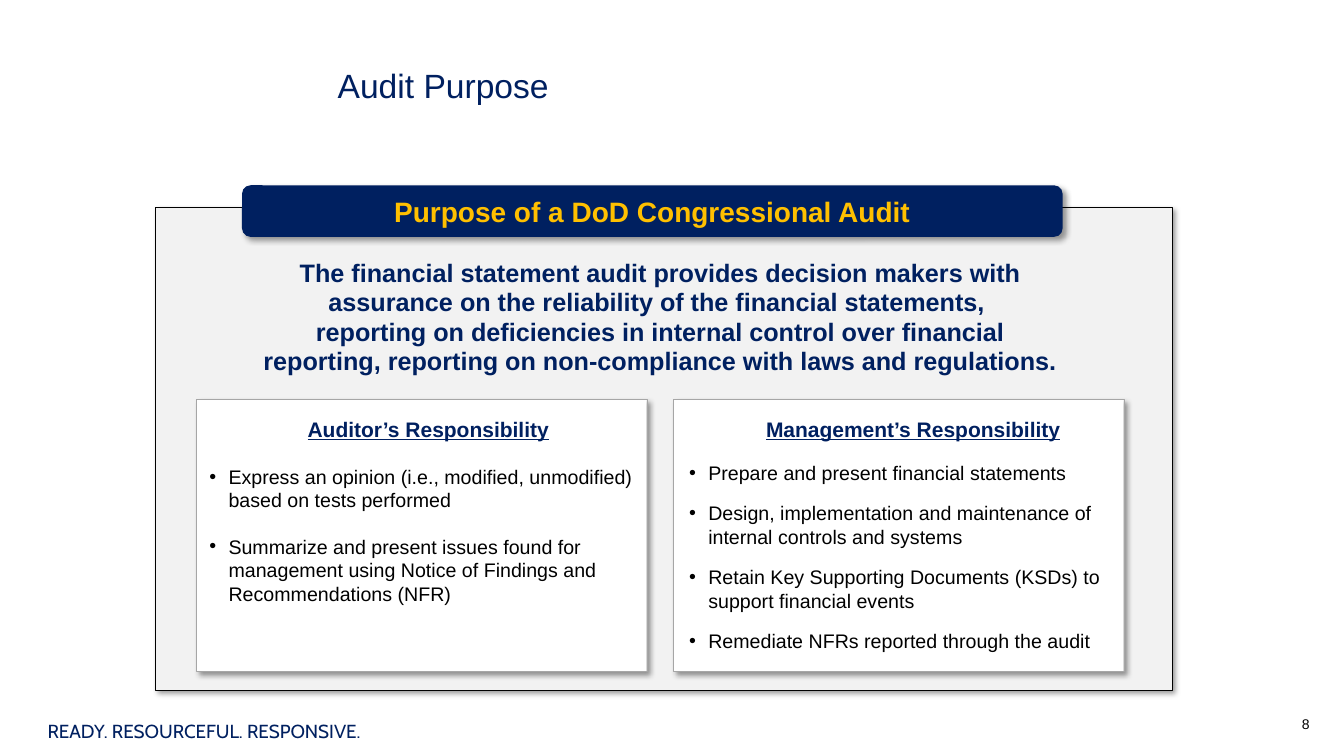
from lxml import etree
from pptx import Presentation
from pptx.dml.color import RGBColor
from pptx.enum.shapes import MSO_SHAPE
from pptx.enum.text import MSO_ANCHOR, PP_ALIGN
from pptx.oxml import parse_xml
from pptx.oxml.ns import qn
from pptx.util import Cm, Pt

NAVY = RGBColor(0x00, 0x20, 0x60)
GOLD = RGBColor(0xFF, 0xC0, 0x00)
BLACK = RGBColor(0x00, 0x00, 0x00)
WHITE = RGBColor(0xFF, 0xFF, 0xFF)
PALE_GRAY = RGBColor(0xF2, 0xF2, 0xF2)
EDGE_GRAY = RGBColor(0xA6, 0xA6, 0xA6)
RECTANGLE, ROUNDED = MSO_SHAPE.RECTANGLE, MSO_SHAPE.ROUNDED_RECTANGLE
CENTER, LEFT = PP_ALIGN.CENTER, PP_ALIGN.LEFT
MIDDLE = MSO_ANCHOR.MIDDLE
SHADOW = (
    '<a:effectLst xmlns:a="http://schemas.openxmlformats.org/drawingml/2006/main">'
    '<a:outerShdw blurRad="50800" dist="38100" dir="2700000" algn="tl" rotWithShape="0">'
    '<a:srgbClr val="000000"><a:alpha val="40000"/></a:srgbClr>'
    '</a:outerShdw></a:effectLst>'
)

presentation = Presentation()
presentation.slide_width = Cm(33.87)
presentation.slide_height = Cm(19.05)
slide = presentation.slides.add_slide(presentation.slide_layouts[6])


def add_panel(kind, left, top, width, height, fill, edge=None):
    shape = slide.shapes.add_shape(kind, Cm(left), Cm(top), Cm(width), Cm(height))
    shape.shadow.inherit = False
    shape.fill.solid()
    shape.fill.fore_color.rgb = fill
    if edge is None:
        shape.line.fill.background()
    else:
        shape.line.color.rgb = edge
        shape.line.width = Pt(0.25)
    properties = shape.fill._xPr
    properties.replace(properties.find(qn("a:effectLst")), parse_xml(SHADOW))
    return shape


def set_font(paragraph, size, color, bold=False, name="Arial"):
    paragraph.font.name = name
    paragraph.font.size = Pt(size)
    paragraph.font.bold = bold
    paragraph.font.color.rgb = color


add_panel(RECTANGLE, 3.91, 5.23, 25.63, 12.17, PALE_GRAY, BLACK)
for card_left in (4.95, 16.97):
    add_panel(RECTANGLE, card_left, 10.06, 11.35, 6.86, WHITE, EDGE_GRAY)

banner = add_panel(ROUNDED, 6.1, 4.67, 20.68, 1.3, NAVY)
banner.text_frame.vertical_anchor = MIDDLE
paragraph = banner.text_frame.paragraphs[0]
paragraph.text = "Purpose of a DoD Congressional Audit"
paragraph.alignment = CENTER
set_font(paragraph, 20, GOLD, True)

statement = slide.shapes.add_textbox(Cm(6.2), Cm(6.38), Cm(20.88), Cm(3.25))
statement.text_frame.word_wrap = True
paragraph = statement.text_frame.paragraphs[0]
paragraph.add_run().text = (
    "The financial statement audit provides decision makers with "
    "assurance on the reliability of the financial statements, "
)
paragraph.add_line_break()
paragraph.add_run().text = (
    "reporting on deficiencies in internal control over financial "
    "reporting, reporting on non-compliance with laws and regulations."
)
paragraph.alignment = CENTER
paragraph.line_spacing = Pt(21)
set_font(paragraph, 18, NAVY, True)

title = slide.shapes.add_textbox(Cm(8.26), Cm(2.01), Cm(7.92), Cm(1.09))
title.text_frame.word_wrap = True
paragraph = title.text_frame.paragraphs[0]
paragraph.text = "Audit Purpose"
paragraph.line_spacing = Pt(14.6)
set_font(paragraph, 24, NAVY)

motto = slide.shapes.add_textbox(Cm(1.02), Cm(17.88), Cm(8.46), Cm(1.07))
motto.text_frame.word_wrap = True
motto.text_frame.vertical_anchor = MIDDLE
motto.text_frame.margin_left = motto.text_frame.margin_right = Cm(0.18)
motto.text_frame.margin_top = motto.text_frame.margin_bottom = Cm(0.1)
paragraph = motto.text_frame.paragraphs[0]
paragraph.text = "READY. RESOURCEFUL. RESPONSIVE."
set_font(paragraph, 13.5, NAVY, name="Cabin")

responsibilities = [
    (5.03, 11.53, 5.82, "Auditor’s Responsibility", 16.8, 16.1, [
        "Express an opinion (i.e., modified, unmodified) based on tests performed",
        "Summarize and present issues found for management using Notice of "
        "Findings and Recommendations (NFR)",
    ]),
    (17.12, 11.79, 7.04, "Management’s Responsibility", 14, 12, [
        "Prepare and present financial statements",
        "Design, implementation and maintenance of internal controls and systems",
        "Retain Key Supporting Documents (KSDs) to support financial events",
        "Remediate NFRs reported through the audit",
    ]),
]
for left, width, height, heading, first_gap, next_gap, duties in responsibilities:
    text_box = slide.shapes.add_textbox(Cm(left), Cm(10.36), Cm(width), Cm(height))
    text_frame = text_box.text_frame
    text_frame.word_wrap = True
    paragraph = text_frame.paragraphs[0]
    paragraph.text = heading
    paragraph.alignment = CENTER
    set_font(paragraph, 15, NAVY, True)
    paragraph.font.underline = True
    for index, duty in enumerate(duties):
        paragraph = text_frame.add_paragraph()
        paragraph.text = duty
        paragraph.level = 1
        paragraph.alignment = LEFT
        paragraph.space_before = Pt(next_gap if index else first_gap)
        properties = paragraph._p.get_or_add_pPr()
        properties.set("marL", str(Cm(0.48)))
        properties.set("indent", str(-Cm(0.48)))
        etree.SubElement(properties, qn("a:buFont")).set("typeface", "Arial")
        etree.SubElement(properties, qn("a:buChar")).set("char", "•")
        set_font(paragraph, 14, BLACK)

page_number = slide.shapes.add_textbox(Cm(32.56), Cm(17.91), Cm(0.71), Cm(0.69))
paragraph = page_number.text_frame.paragraphs[0]
paragraph.text = "8"
set_font(paragraph, 10, BLACK)

presentation.save("out.pptx")
